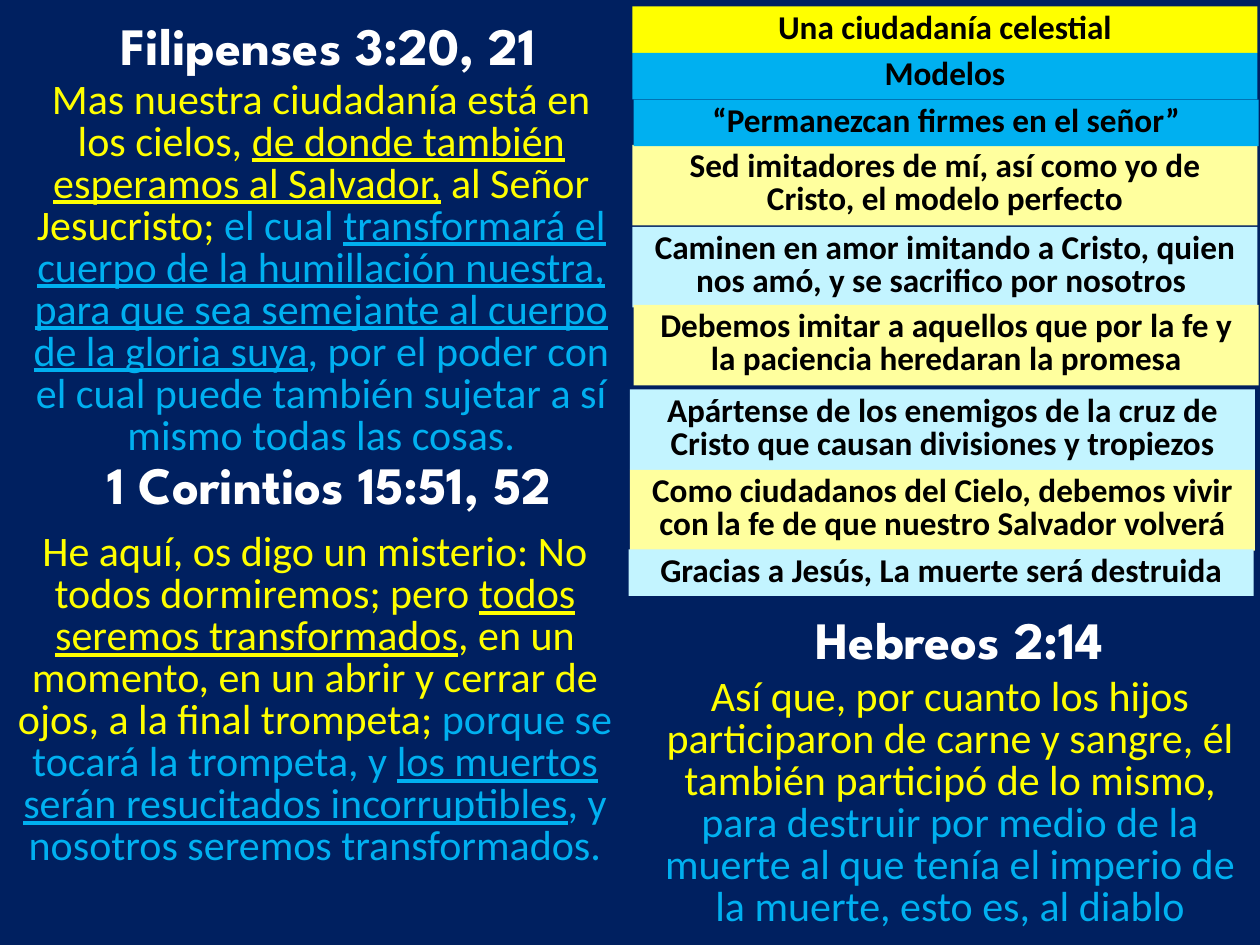
from pptx import Presentation
from pptx.dml.color import RGBColor
from pptx.enum.shapes import MSO_SHAPE as Shape
from pptx.enum.text import MSO_ANCHOR as Anchor, MSO_AUTO_SIZE as AutoSize, PP_ALIGN as Align
from pptx.util import Inches, Pt

NAVY, WHITE, BLACK = "002060", "FFFFFF", "000000"
YELLOW, BLUE, CREAM, ICE = "FFFF00", "00B0F0", "FFFF9E", "C3F4FF"

# Main points: left, top, height, fill, text
ONE_LINE, TWO_LINES = 0.37, 0.64
POINTS = [
    (5.02, 0.05, ONE_LINE, YELLOW, "Una ciudadanía celestial"),
    (5.02, 0.42, ONE_LINE, BLUE, "Modelos"),
    (5.02, 1.15, TWO_LINES, CREAM,
     "Sed imitadores de mí, así como yo de Cristo, el modelo perfecto"),
    (5.02, 1.8, TWO_LINES, ICE,
     "Caminen en amor imitando a Cristo, quien nos amó, y se sacrifico por nosotros "),
    (5.03, 2.42, TWO_LINES, CREAM,
     "Debemos imitar a aquellos que por la fe y la paciencia heredaran la promesa"),
    (5, 3.09, TWO_LINES, ICE,
     "Apártense de los enemigos de la cruz de Cristo que causan divisiones y tropiezos"),
    (5.03, 0.79, ONE_LINE, BLUE, "“Permanezcan firmes en el señor”"),
    (5, 3.73, TWO_LINES, CREAM,
     "Como ciudadanos del Cielo, debemos vivir con la fe de que nuestro Salvador volverá"),
    (4.99, 4.36, ONE_LINE, ICE, "Gracias a Jesús, La muerte será destruida"),
]

# Verses: runs of text, colour, underline
FILIPENSES = [
    ("Mas nuestra ciudadanía está en los cielos, ", YELLOW, False),
    ("de donde también esperamos al Salvador,", YELLOW, True),
    (" al Señor Jesucristo; ", YELLOW, False),
    ("el cual ", BLUE, False),
    ("transformará el cuerpo de la humillación nuestra, para que sea "
     "semejante al cuerpo de la gloria suya", BLUE, True),
    (", por el poder con el cual puede también sujetar a sí mismo todas las cosas.",
     BLUE, False),
]
CORINTIOS = [
    ("He aquí, os digo un misterio: No todos dormiremos; pero ", YELLOW, False),
    ("todos seremos transformados", YELLOW, True),
    (", en un momento, en un abrir y cerrar de ojos, a la final trompeta; ", YELLOW, False),
    ("porque se tocará la trompeta, y ", BLUE, False),
    ("los muertos serán resucitados incorruptibles", BLUE, True),
    (", y nosotros seremos transformados.", BLUE, False),
]
HEBREOS = [
    ("Así que, por cuanto los hijos participaron de carne y sangre, él también "
     "participó de lo mismo, ", YELLOW, False),
    ("para destruir por medio de la muerte al que tenía el imperio de la muerte, "
     "esto es, al diablo", BLUE, False),
]


def color(hex_code):
    return RGBColor.from_string(hex_code)


def write(holder, text, font="Calibri", size=24, fill=BLACK, bold=False,
          underline=False, spacing=None, anchor=Anchor.TOP):
    """Add a formatted run to the holder's centred paragraph."""
    frame = holder.text_frame
    frame.word_wrap = True
    frame.auto_size = AutoSize.NONE
    frame.vertical_anchor = anchor
    paragraph = frame.paragraphs[0]
    paragraph.alignment = Align.CENTER
    if spacing:
        paragraph.line_spacing = Pt(spacing)
    run = paragraph.add_run()
    run.text = text
    run.font.name = font
    run.font.size = Pt(size)
    run.font.bold = bold
    run.font.underline = underline
    run.font.color.rgb = color(fill)


def add_heading(slide, box, reference, holder=None):
    left, top, width, height = map(Inches, box)
    if holder is None:
        holder = slide.shapes.add_textbox(left, top, width, height)
    else:
        holder.left, holder.top, holder.width, holder.height = left, top, width, height
    write(holder, reference, font="League Spartan", size=30, fill=WHITE, bold=True)


def add_verse(slide, box, runs):
    verse = slide.shapes.add_textbox(*map(Inches, box))
    for text, fill, underline in runs:
        write(verse, text, fill=fill, underline=underline, spacing=24)


def add_point(slide, box, fill, text):
    band = slide.shapes.add_shape(Shape.RECTANGLE, *map(Inches, box))
    band.shadow.inherit = False
    band.fill.solid()
    band.fill.fore_color.rgb = color(fill)
    band.line.fill.background()
    write(band, text, size=19, bold=True, spacing=19)


def main():
    deck = Presentation()
    deck.slide_width, deck.slide_height = Inches(10), Inches(7.5)
    slide = deck.slides.add_slide(deck.slide_layouts[5])
    slide.background.fill.solid()
    slide.background.fill.fore_color.rgb = color(NAVY)

    # Left column: two passages
    add_heading(slide, (0.28, 0.05, 4.65, 0.61), "Filipenses 3:20, 21", slide.shapes.title)
    add_verse(slide, (0.1, 0.59, 4.9, 3.13), FILIPENSES)
    add_heading(slide, (0.29, 3.54, 4.65, 0.61), "1 Corintios 15:51, 52")
    add_verse(slide, (0, 4.18, 5, 2.8), CORINTIOS)

    # Right column: main points above the last passage
    for left, top, height, fill, text in POINTS:
        add_point(slide, (left, top, 4.96, height), fill, text)
    add_heading(slide, (5.29, 4.77, 4.65, 0.61), "Hebreos 2:14")
    add_verse(slide, (5.04, 5.33, 5, 2.13), HEBREOS)

    deck.save("out.pptx")


if __name__ == "__main__":
    main()
